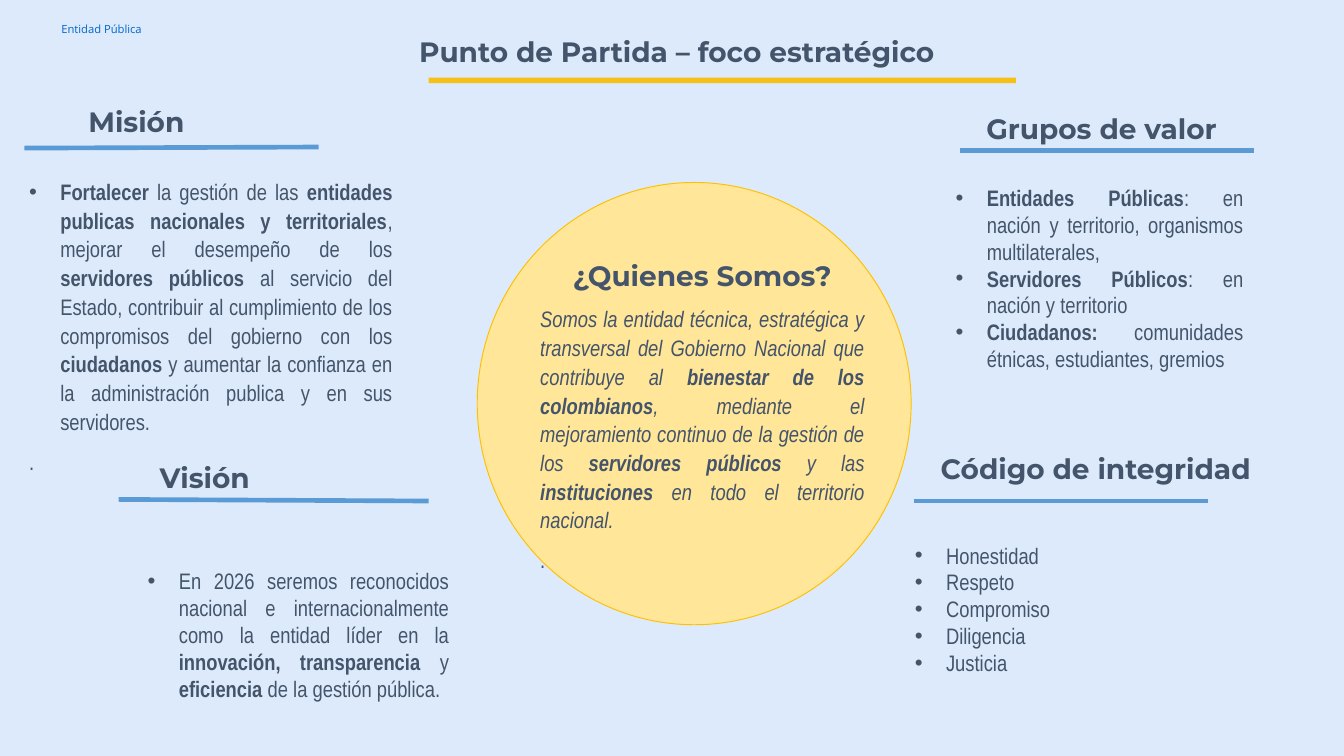
from lxml.etree import SubElement
from pptx import Presentation
from pptx.dml.color import RGBColor
from pptx.enum.shapes import MSO_CONNECTOR as Connector, MSO_SHAPE as Shape
from pptx.enum.text import MSO_ANCHOR as Anchor, MSO_AUTO_SIZE as AutoSize, PP_ALIGN as Align
from pptx.oxml.ns import qn
from pptx.util import Cm, Pt

COLORS = {
    "background": "DCEAFB", "text": "44546A", "label": "0066CD", "blue": "5B9BD5",
    "gold": "F9BC00", "circle": "FFE699", "outline": "FFC000",
}
HEADING = {"font": "Montserrat", "size": 15, "spacing": 1.07, "after": 6}
BODY = {"font": "Arial Narrow", "size": 12, "align": Align.JUSTIFY}
LOOSE = {**BODY, "spacing": 1.07, "after": 6}

MISSION = (
    "*Fortalecer* la gestión de las *entidades publicas nacionales y territoriales*, "
    "mejorar el desempeño de los *servidores públicos* al servicio del Estado, "
    "contribuir al cumplimiento de los compromisos del gobierno con los *ciudadanos* "
    "y aumentar la confianza en la administración publica y en sus servidores."
)
VISION = (
    "En 2026 seremos reconocidos nacional e internacionalmente como la entidad líder "
    "en la *innovación, transparencia* y *eficiencia* de la gestión pública."
)
ABOUT = (
    "Somos la entidad técnica, estratégica y transversal del Gobierno Nacional que "
    "contribuye al *bienestar de los colombianos*, mediante el mejoramiento continuo "
    "de la gestión de los *servidores públicos* y las *instituciones* en todo el "
    "territorio nacional."
)
VALUE_GROUPS = [
    "*Entidades Públicas*: en nación y territorio, organismos multilaterales,",
    "*Servidores Públicos*: en nación y territorio",
    "*Ciudadanos:* comunidades étnicas, estudiantes, gremios",
]
INTEGRITY = ["Honestidad", "Respeto", "Compromiso", "Diligencia", "Justicia"]


def rgb(name):
    """Return the named palette colour."""
    return RGBColor.from_string(COLORS[name])


def set_bullet(paragraph, bullet):
    """Give the paragraph a hanging bullet or remove the inherited one."""
    properties = paragraph._p.get_or_add_pPr()
    indent = Cm(0.59) if bullet else 0
    properties.set("marL", str(indent))
    properties.set("indent", str(-indent))
    if bullet:
        SubElement(properties, qn("a:buFont"), typeface="Arial")
        SubElement(properties, qn("a:buChar"), char="•")
    else:
        SubElement(properties, qn("a:buNone"))


def write(paragraph, marked, font, size, color="text", align=Align.LEFT,
          spacing=1.0, after=0, bullet=False, italic=False):
    """Write a paragraph whose bold parts stand between asterisks."""
    paragraph.alignment = align
    paragraph.line_spacing = spacing
    paragraph.space_before, paragraph.space_after = Pt(0), Pt(after)
    set_bullet(paragraph, bullet)
    for position, part in enumerate(marked.split("*")):
        if part:
            run = paragraph.add_run()
            run.text = part
            run.font.name, run.font.size = font, Pt(size)
            run.font.bold, run.font.italic = position % 2 == 1, italic
            run.font.color.rgb = rgb(color)


def fill_frame(holder, paragraphs, anchor=Anchor.TOP):
    """Write (text, style) pairs into a text holder."""
    frame = holder.text_frame
    frame.word_wrap, frame.auto_size = True, AutoSize.NONE
    frame.vertical_anchor = anchor
    frame.margin_left = frame.margin_right = Cm(0.25)
    frame.margin_top = frame.margin_bottom = Cm(0.13)
    for position, (marked, style) in enumerate(paragraphs):
        paragraph = frame.add_paragraph() if position else frame.paragraphs[0]
        write(paragraph, marked, **style)


def add_text(slide, box, paragraphs, anchor=Anchor.TOP):
    """Add a text box with the given paragraphs."""
    holder = slide.shapes.add_textbox(*map(Cm, box))
    fill_frame(holder, paragraphs, anchor)
    return holder


def place(placeholder, box, paragraphs):
    """Move a template placeholder and fill it."""
    placeholder.left, placeholder.top, placeholder.width, placeholder.height = map(Cm, box)
    fill_frame(placeholder, paragraphs)


def add_rule(slide, ends, color="blue", width=2.5, opacity=None):
    """Draw an underline between two points."""
    rule = slide.shapes.add_connector(Connector.STRAIGHT, *map(Cm, ends))
    rule.line.color.rgb, rule.line.width = rgb(color), Pt(width)
    if opacity:
        tint = rule.line._ln.find(".//" + qn("a:srgbClr"))
        SubElement(tint, qn("a:alpha"), val=str(opacity * 1000))
    SubElement(rule._element.spPr, qn("a:effectLst"))


def add_circle(slide, box):
    """Draw the central circle."""
    circle = slide.shapes.add_shape(Shape.OVAL, *map(Cm, box))
    circle.shadow.inherit = False
    circle.fill.solid()
    circle.fill.fore_color.rgb = rgb("circle")
    circle.line.color.rgb, circle.line.width = rgb("outline"), Pt(0.5)


def main():
    """Build the strategic focus slide."""
    deck = Presentation()
    deck.slide_width, deck.slide_height = Cm(25.4), Cm(14.29)
    slide = deck.slides.add_slide(deck.slide_layouts.get_by_name("Comparison"))
    slide.background.fill.solid()
    slide.background.fill.fore_color.rgb = rgb("background")

    title, *lists = slide.placeholders
    place(title, (7.67, 0.48, 10.82, 0.94),
          [("*Punto de Partida – foco estratégico*", HEADING)])
    add_rule(slide, (8.1, 1.52, 19.2, 1.52), "gold", 3, 91)
    label = {"font": "Open Sans", "size": 6, "color": "label"}
    add_text(slide, (0.91, 0.3, 5.16, 0.51), [("Entidad Pública", label)], Anchor.MIDDLE)

    bulleted = {**BODY, "bullet": True}
    sections = [
        ("Misión", (1.42, 1.8, 10.62, 0.94), (0.46, 2.8, 6.02, 2.78),
         (0.3, 3.2, 7.37, 5.97), [(MISSION, {**LOOSE, "bullet": True}), (".", LOOSE)]),
        ("Visión", (2.77, 8.53, 2.34, 0.94), (2.24, 9.44, 8.1, 9.47),
         (2.54, 10.59, 6.2, 2.82), [(VISION, bulleted)]),
        ("Grupos de valor", (18.39, 1.93, 7, 0.94), (18.14, 2.84, 23.7, 2.84),
         (17.81, 3.35, 5.94, 3.84), [(group, bulleted) for group in VALUE_GROUPS]),
        ("Código de integridad", (17.53, 8.36, 7.8, 0.94), (17.27, 9.47, 22.83, 9.47),
         (17.04, 10.11, 5.94, 3.84), [(value, bulleted) for value in INTEGRITY]),
    ]
    for body, (heading, heading_box, rule, body_box, content) in zip(lists, sections):
        add_text(slide, heading_box, [(f"*{heading}*", HEADING)])
        add_rule(slide, rule)
        place(body, body_box, content)

    add_circle(slide, (9.02, 3.45, 8.2, 8.36))
    add_text(slide, (9.96, 4.72, 6.63, 6.3), [
        ("*¿Quienes Somos?*", {**HEADING, "align": Align.CENTER}),
        (ABOUT, {**LOOSE, "italic": True}),
        (".", LOOSE),
    ])
    deck.save("out.pptx")


if __name__ == "__main__":
    main()
